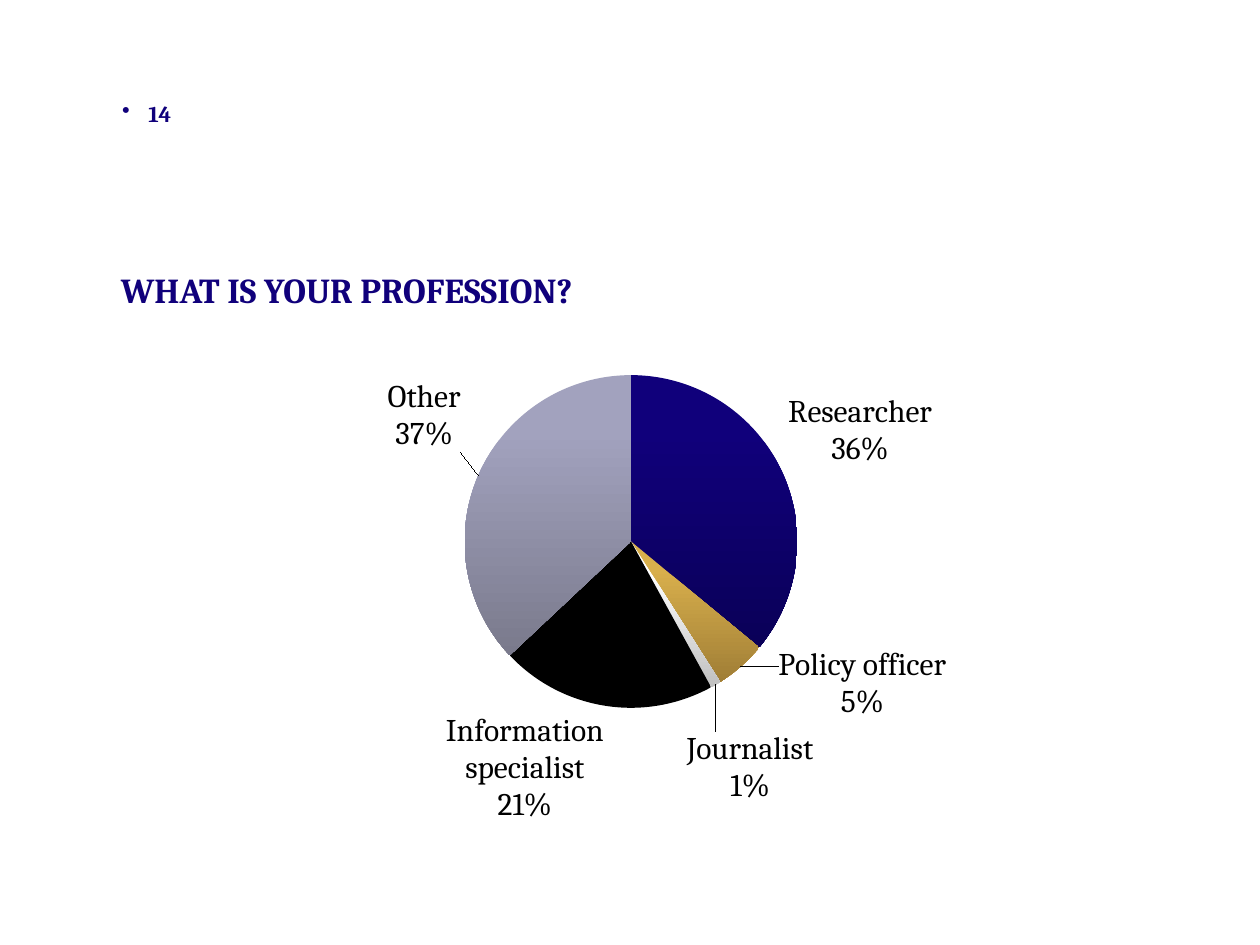
from copy import deepcopy

from lxml import etree
from pptx import Presentation
from pptx.chart.data import CategoryChartData
from pptx.dml.color import RGBColor
from pptx.enum.chart import XL_CHART_TYPE, XL_LABEL_POSITION
from pptx.oxml import parse_xml
from pptx.oxml.ns import nsdecls, qn
from pptx.util import Pt

NAVY = RGBColor(0x10, 0x00, 0x7B)
BLACK = RGBColor(0x00, 0x00, 0x00)
FONT = "Cambria"

# profession, percent, top and bottom colour of the slice
PROFESSIONS = [
    ("Researcher", 36, NAVY, RGBColor(0x0A, 0x00, 0x58)),
    ("Policy officer", 5, RGBColor(0xD8, 0xAF, 0x4C), RGBColor(0xA0, 0x7E, 0x36)),
    ("Journalist", 1, RGBColor(0xFF, 0xFF, 0xFF), RGBColor(0xC0, 0xC0, 0xC0)),
    ("Information specialist", 21, BLACK, BLACK),
    ("Other", 37, RGBColor(0xA2, 0xA2, 0xBE), RGBColor(0x7A, 0x7A, 0x8C)),
]
# label shifts by slice index, as fractions of the chart's width and height
LABEL_SHIFTS = {1: (0.03, -0.05), 2: (-0.03, 0.08), 4: (-0.01, -0.04)}


def add_heading(left, top, width, height, text, size):
    frame = slide.shapes.add_textbox(Pt(left), Pt(top), Pt(width), Pt(height)).text_frame
    frame.margin_left = frame.margin_top = frame.margin_right = frame.margin_bottom = 0
    frame.word_wrap = True
    heading = frame.paragraphs[0]
    heading.text = text
    heading.font.size = Pt(size)
    heading.font.name = FONT
    heading.font.bold = True
    heading.font.color.rgb = NAVY
    return heading


def manual_layout(inner="", **values):
    """Return a c:layout element holding the given x, y, w and h fractions."""
    parts = "".join(f'<c:{key} val="{value}"/>' for key, value in values.items())
    return parse_xml(f'<c:layout {nsdecls("c")}><c:manualLayout>{inner}{parts}'
                     '</c:manualLayout></c:layout>')


prs = Presentation()
prs.slide_width, prs.slide_height = Pt(720), Pt(540)
slide = prs.slides.add_slide(prs.slide_layouts[6])

question = add_heading(69.1, 145.4, 616.3, 40.3, "WHAT IS YOUR PROFESSION?", 20)
question.line_spacing = Pt(32)

page_number = add_heading(69.8, 56.9, 38.9, 37.4, "14", 13)
bullet_properties = page_number._p.get_or_add_pPr()
bullet_properties.set("marL", str(Pt(15)))
bullet_properties.set("indent", str(Pt(-15)))
etree.SubElement(bullet_properties, qn("a:buChar")).set("char", "•")

survey = CategoryChartData()
survey.categories = [profession for profession, *_ in PROFESSIONS]
survey.add_series("Series 1", [percent for _, percent, *_ in PROFESSIONS])
chart = slide.shapes.add_chart(XL_CHART_TYPE.PIE, Pt(69.8), Pt(195.1),
                               Pt(621.4), Pt(286.6), survey).chart
chart.has_legend = False
chart.has_title = False
chart.font.size = Pt(18)
chart.font.name = FONT
chart.font.color.rgb = BLACK

plot_area = chart._chartSpace.chart.plotArea
for default_layout in plot_area.findall(qn("c:layout")):
    plot_area.remove(default_layout)
plot_frame = ('<c:layoutTarget val="inner"/><c:xMode val="edge"/>'
              '<c:yMode val="edge"/>')
plot_area.insert(0, manual_layout(plot_frame, x=0.315, y=0.067, w=0.306, h=0.664))

answers = chart.plots[0].series[0]
for index, (_, _, top_colour, bottom_colour) in enumerate(PROFESSIONS):
    slice_format = answers.points[index].format
    slice_format.line.fill.background()
    slice_format.fill.gradient()
    slice_format.fill.gradient_angle = 270
    stops = slice_format.fill.gradient_stops
    stops[0].color.rgb, stops[1].color.rgb = top_colour, bottom_colour
    stops[0].position, stops[1].position = 0.2, 1

labels = answers.data_labels
labels.show_category_name = True
labels.show_percentage = True
labels.show_value = False
labels.number_format = "0%"
labels.number_format_is_linked = False
labels.position = XL_LABEL_POSITION.OUTSIDE_END
labels.font.size = Pt(18)
labels.font.name = FONT
labels.font.color.rgb = BLACK

label_xml = labels._element
separator = etree.Element(qn("c:separator"))
separator.text = "\n"
label_xml.find(qn("c:showBubbleSize")).addnext(separator)
shared_settings = [part for part in label_xml if part.tag != qn("c:showLeaderLines")]
for position, (index, (x, y)) in enumerate(LABEL_SHIFTS.items()):
    shifted = parse_xml(f'<c:dLbl {nsdecls("c")}><c:idx val="{index}"/></c:dLbl>')
    shifted.append(manual_layout(x=x, y=y))
    shifted.extend(deepcopy(part) for part in shared_settings)
    label_xml.insert(position, shifted)

prs.save("out.pptx")
